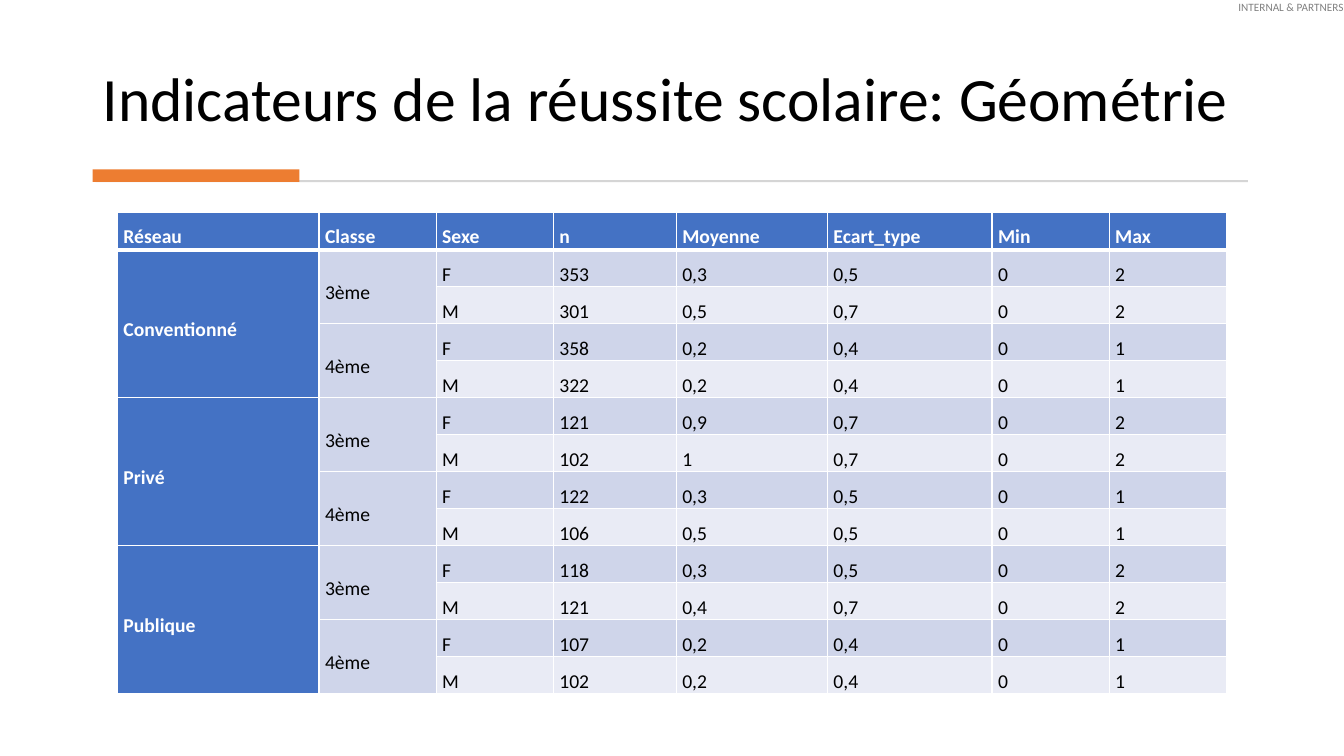
"""Build the slide of school success indicators for geometry."""
from dataclasses import dataclass

import pptx
import pptx.dml.color
import pptx.enum.shapes
import pptx.enum.text
import pptx.oxml
import pptx.oxml.ns
import pptx.shapes.shapetree
import pptx.table
import pptx.text.text
import pptx.util

Pt = pptx.util.Pt
RGBColor = pptx.dml.color.RGBColor
Anchor = pptx.enum.text.MSO_ANCHOR
Align = pptx.enum.text.PP_ALIGN

FONT = "Calibri"
BLACK = RGBColor(0x00, 0x00, 0x00)
WHITE = RGBColor(0xFF, 0xFF, 0xFF)
GREY = RGBColor(0x80, 0x80, 0x80)
RULE_GREY = RGBColor(0xD5, 0xD5, 0xD5)
ORANGE = RGBColor(0xED, 0x7D, 0x31)
BLUE = RGBColor(0x44, 0x72, 0xC4)
BAND_DARK = RGBColor(0xCF, 0xD5, 0xEA)
BAND_LIGHT = RGBColor(0xE9, 0xEB, 0xF5)

HEADINGS = ("Réseau", "Classe", "Sexe", "n", "Moyenne", "Ecart_type", "Min", "Max")
COLUMN_WIDTHS = (144, 83.7, 83.7, 87.8, 108, 117.6, 83.7, 83.7)
ROW_HEIGHT = 26.42
NETWORKS = ("Conventionné", "Privé", "Publique")
CLASSES = ("3ème", "4ème")
SEXES = ("F", "M")
NETWORK_SPAN = len(CLASSES) * len(SEXES)
CLASS_SPAN = len(SEXES)
RESULTS = (
    ("353", "0,3", "0,5", "0", "2"),
    ("301", "0,5", "0,7", "0", "2"),
    ("358", "0,2", "0,4", "0", "1"),
    ("322", "0,2", "0,4", "0", "1"),
    ("121", "0,9", "0,7", "0", "2"),
    ("102", "1", "0,7", "0", "2"),
    ("122", "0,3", "0,5", "0", "1"),
    ("106", "0,5", "0,5", "0", "1"),
    ("118", "0,3", "0,5", "0", "2"),
    ("121", "0,4", "0,7", "0", "2"),
    ("107", "0,2", "0,4", "0", "1"),
    ("102", "0,2", "0,4", "0", "1"),
)


@dataclass(frozen=True)
class Bar:
    left: float
    top: float
    width: float
    height: float
    color: RGBColor


@dataclass(frozen=True)
class Label:
    text: str
    left: float
    top: float
    width: float
    height: float
    size: float
    color: RGBColor
    inset_x: float
    inset_y: float
    anchor: Anchor
    line_spacing: float
    wrap: bool


@dataclass(frozen=True)
class CellStyle:
    fill: RGBColor
    color: RGBColor
    bold: bool
    anchor: Anchor


HEADER = CellStyle(BLUE, WHITE, True, Anchor.TOP)
NETWORK = CellStyle(BLUE, WHITE, True, Anchor.MIDDLE)
CLASS = CellStyle(BAND_DARK, BLACK, False, Anchor.MIDDLE)
BANDS = tuple(CellStyle(fill, BLACK, False, Anchor.BOTTOM) for fill in (BAND_DARK, BAND_LIGHT))

BARS = (
    Bar(68.4, 128.7, 823, 1.4, RULE_GREY),
    Bar(66.24, 121.1, 147.6, 8.8, ORANGE),
)
LABELS = (
    Label("INTERNAL & PARTNERS", 884.6, 0, 77, 9.4, 8, GREY, 0, 0, Anchor.TOP, 1, False),
    Label("Indicateurs de la réussite scolaire: Géométrie", 66.24, 20.16, 827.3, 79.9,
          44, BLACK, 7.2, 3.6, Anchor.BOTTOM, 0.9, True),
)


def add_span(para: pptx.text.text._Paragraph, text: str, size: float,
             color: RGBColor, bold: bool = False) -> None:
    span = para.add_run()
    span.text = text
    span.font.name = FONT
    span.font.size = Pt(size)
    span.font.bold = bold
    span.font.color.rgb = color


def draw_bar(shapes: pptx.shapes.shapetree.SlideShapes, bar: Bar) -> None:
    box = shapes.add_shape(pptx.enum.shapes.MSO_SHAPE.RECTANGLE,
                           Pt(bar.left), Pt(bar.top), Pt(bar.width), Pt(bar.height))
    box.shadow.inherit = False
    box.fill.solid()
    box.fill.fore_color.rgb = bar.color
    box.line.fill.background()


def draw_label(shapes: pptx.shapes.shapetree.SlideShapes, label: Label) -> None:
    box = shapes.add_textbox(Pt(label.left), Pt(label.top), Pt(label.width), Pt(label.height))
    frame = box.text_frame
    frame.word_wrap = label.wrap
    frame.vertical_anchor = label.anchor
    frame.margin_left = frame.margin_right = Pt(label.inset_x)
    frame.margin_top = frame.margin_bottom = Pt(label.inset_y)
    para = frame.paragraphs[0]
    para.line_spacing = label.line_spacing
    add_span(para, label.text, label.size, label.color)


def add_borders(cell: pptx.table._Cell, top: float, bottom: float) -> None:
    properties = cell._tc.get_or_add_tcPr()
    for side, width in (("L", 1), ("R", 1), ("T", top), ("B", bottom)):
        properties.append(pptx.oxml.parse_xml(
            f'<a:ln{side} {pptx.oxml.ns.nsdecls("a")} w="{Pt(width)}">'
            f'<a:solidFill><a:srgbClr val="{WHITE}"/></a:solidFill></a:ln{side}>'))


def style_cell(cell: pptx.table._Cell, text: str, style: CellStyle, row: int) -> None:
    add_borders(cell, top=3 if row == 1 else 1, bottom=3 if row == 0 else 1)
    cell.fill.solid()
    cell.fill.fore_color.rgb = style.fill
    cell.vertical_anchor = style.anchor
    cell.margin_left = cell.margin_right = Pt(4.3)
    cell.margin_top = cell.margin_bottom = Pt(0)
    para = cell.text_frame.paragraphs[0]
    para.alignment = Align.JUSTIFY
    para.line_spacing = 1.5
    para.space_after = Pt(8)
    if text:
        add_span(para, text, 14, style.color, style.bold)


def draw_results(shapes: pptx.shapes.shapetree.SlideShapes) -> None:
    row_count = len(RESULTS) + 1
    table = shapes.add_table(row_count, len(HEADINGS), Pt(83.9), Pt(151.9),
                             Pt(sum(COLUMN_WIDTHS)), Pt(ROW_HEIGHT * row_count)).table
    for column, width in zip(table.columns, COLUMN_WIDTHS):
        column.width = Pt(width)
    for table_row in table.rows:
        table_row.height = Pt(ROW_HEIGHT)
    for column, heading in enumerate(HEADINGS):
        style_cell(table.cell(0, column), heading, HEADER, 0)
    for index, values in enumerate(RESULTS):
        row = index + 1
        network = "" if index % NETWORK_SPAN else NETWORKS[index // NETWORK_SPAN]
        level = "" if index % CLASS_SPAN else CLASSES[index // CLASS_SPAN % len(CLASSES)]
        sex = index % len(SEXES)
        texts = (network, level, SEXES[sex], *values)
        styles = (NETWORK, CLASS) + (BANDS[sex],) * (len(values) + 1)
        for column, (text, style) in enumerate(zip(texts, styles)):
            style_cell(table.cell(row, column), text, style, row)
    for column, span_rows in enumerate((NETWORK_SPAN, CLASS_SPAN)):
        for row in range(1, row_count, span_rows):
            table.cell(row, column).merge(table.cell(row + span_rows - 1, column))


def main() -> None:
    deck = pptx.Presentation()
    deck.slide_width = Pt(960)
    deck.slide_height = Pt(540)
    page = deck.slides.add_slide(deck.slide_layouts[6])
    for label in LABELS:
        draw_label(page.shapes, label)
    for bar in BARS:
        draw_bar(page.shapes, bar)
    draw_results(page.shapes)
    deck.save("out.pptx")


if __name__ == "__main__":
    main()
